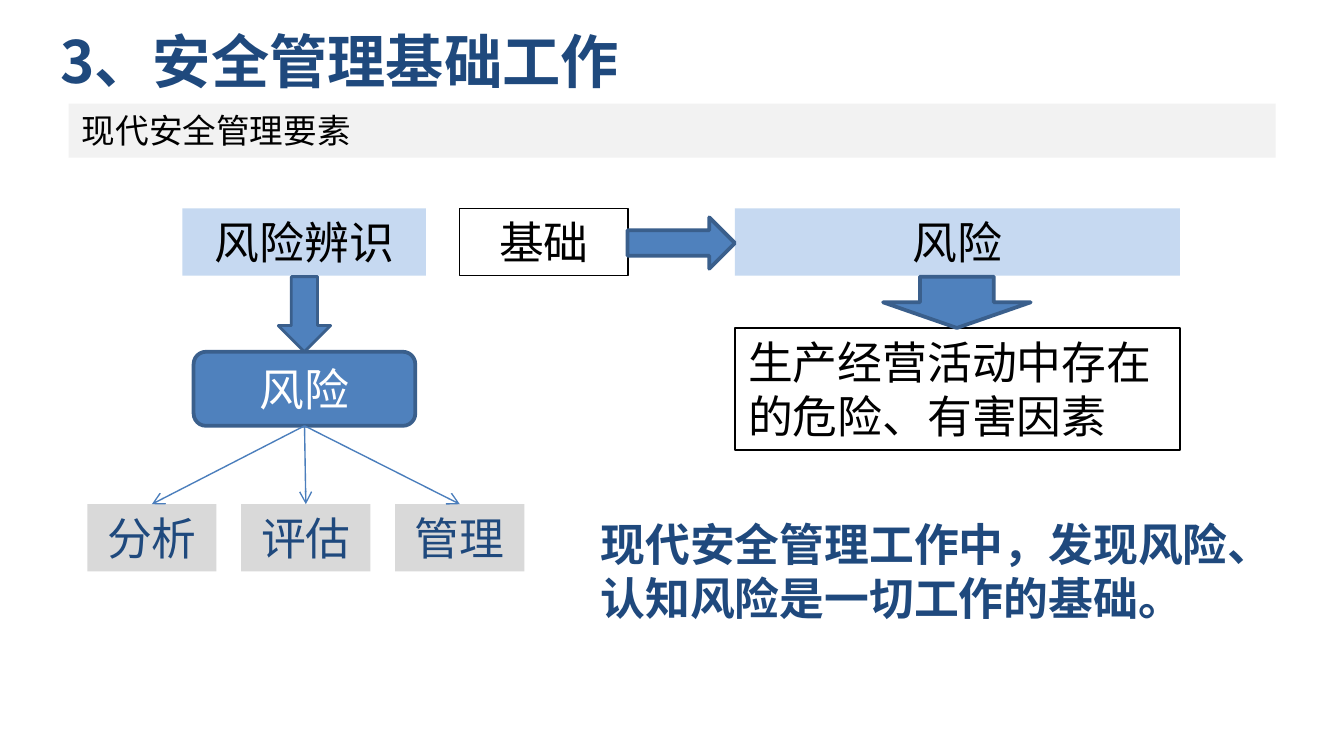
from dataclasses import dataclass
from typing import Optional

from lxml import etree
from pptx import Presentation
from pptx import util as u
from pptx.dml.color import RGBColor
from pptx.enum import shapes, text
from pptx.oxml.ns import qn


@dataclass(frozen=True)
class Theme:
    font: str = "Noto Sans CJK SC"
    navy: str = "1F497D"
    black: str = "000000"
    white: str = "FFFFFF"
    blue: str = "4F81BD"
    outline: str = "3A5F8C"
    link: str = "4B7EBC"
    pale_blue: str = "C6D9F1"
    grey: str = "D9D9D9"
    band: str = "F2F2F2"
    title: float = 31.2
    body: float = 24
    subtitle: float = 18


T = Theme()
RECT = shapes.MSO_SHAPE.RECTANGLE
ROUND = shapes.MSO_SHAPE.ROUNDED_RECTANGLE
DOWN = shapes.MSO_SHAPE.DOWN_ARROW
RIGHT = shapes.MSO_SHAPE.RIGHT_ARROW
LEFT_ALIGN = text.PP_ALIGN.LEFT
CENTER = text.PP_ALIGN.CENTER


@dataclass(frozen=True)
class Box:
    x: float
    y: float
    w: float
    h: float
    label: str = ""
    fill: Optional[str] = None
    line: Optional[str] = None
    line_width: float = 0.75
    color: str = T.black
    size: float = T.body
    align: text.PP_ALIGN = CENTER
    kind: shapes.MSO_SHAPE = RECT


@dataclass(frozen=True)
class Caption:
    x: float
    y: float
    w: float
    h: float
    label: str
    size: float


def rgb(value: str) -> RGBColor:
    return RGBColor.from_string(value)


def write(sp, label: str, size: float, color: str, align, bold: bool = False) -> None:
    tf = sp.text_frame
    tf.word_wrap = True
    tf.vertical_anchor = text.MSO_ANCHOR.TOP
    tf.text = label
    p = tf.paragraphs[0]
    p.alignment = align
    r = p.runs[0]
    r.font.name = T.font
    r.font.size = u.Pt(size)
    r.font.bold = bold
    r.font.color.rgb = rgb(color)
    ea = etree.SubElement(r.font._element, qn("a:ea"))
    ea.set("typeface", T.font)


def draw_box(s, box: Box):
    sp = s.shapes.add_shape(box.kind, u.Cm(box.x), u.Cm(box.y), u.Cm(box.w), u.Cm(box.h))
    sp.shadow.inherit = False
    if box.fill:
        sp.fill.solid()
        sp.fill.fore_color.rgb = rgb(box.fill)
    else:
        sp.fill.background()
    if box.line:
        sp.line.color.rgb = rgb(box.line)
        sp.line.width = u.Pt(box.line_width)
    else:
        sp.line.fill.background()
    if box.label:
        write(sp, box.label, box.size, box.color, box.align)
    if box.kind == ROUND:
        sp.text_frame.vertical_anchor = text.MSO_ANCHOR.MIDDLE
    return sp


def draw_caption(s, cap: Caption) -> None:
    sp = s.shapes.add_textbox(u.Cm(cap.x), u.Cm(cap.y), u.Cm(cap.w), u.Cm(cap.h))
    write(sp, cap.label, cap.size, T.navy, LEFT_ALIGN, bold=True)


def draw_link(s, parent, child) -> None:
    c = s.shapes.add_connector(shapes.MSO_CONNECTOR.STRAIGHT, 0, 0, 0, 0)
    c.begin_connect(parent, 2)
    c.end_connect(child, 0)
    c.line.color.rgb = rgb(T.link)
    c.line.width = u.Pt(0.75)
    etree.SubElement(c.line._get_or_add_ln(), qn("a:tailEnd"), type="arrow")
    etree.SubElement(c._element.spPr, qn("a:effectLst"))


ROW_Y, ROW_H = 3.94, 1.27
LEAF_X, LEAF_Y, LEAF_STEP = 1.65, 9.53, 2.91
RISK_X, RISK_W = 13.89, 8.41

SUBTITLE = Box(1.3, 1.96, 22.81, 1.02, "现代安全管理要素", T.band,
               size=T.subtitle, align=LEFT_ALIGN)
LEAVES = [Box(LEAF_X + i * LEAF_STEP, LEAF_Y, 2.44, ROW_H, label, T.grey, color=T.navy)
          for i, label in enumerate(("分析", "评估", "管理"))]
HUB = Box(3.66, 6.65, 4.19, 1.4, "风险", T.blue, T.outline, 2, T.white, kind=ROUND)
FLOW = [
    Box(3.45, ROW_Y, 4.6, ROW_H, "风险辨识", T.pale_blue),
    Box(5.26, 5.23, 0.99, 1.42, fill=T.blue, line=T.outline, line_width=1.5, kind=DOWN),
    Box(8.69, ROW_Y, 3.18, ROW_H, "基础", line=T.black),
    Box(RISK_X, ROW_Y, RISK_W, ROW_H, "风险", T.pale_blue),
    Box(11.86, 4.11, 2.03, 0.97, fill=T.blue, line=T.outline, line_width=2, kind=RIGHT),
    Box(RISK_X, 6.2, RISK_W, 2.31, "生产经营活动中存在的危险、有害因素",
        line=T.black, align=LEFT_ALIGN),
    Box(16.69, 5.23, 2.79, 0.97, fill=T.blue, line=T.outline, line_width=2, kind=DOWN),
]
CAPTIONS = [
    Caption(11.1, 9.65, 12.4, 2.31,
            "现代安全管理工作中，发现风险、认知风险是一切工作的基础。", T.body),
    Caption(0.89, 0.36, 22.86, 1.78, "3、安全管理基础工作", T.title),
]


def main() -> None:
    prs = Presentation()
    prs.slide_width, prs.slide_height = u.Cm(25.4), u.Cm(14.29)
    s = prs.slides.add_slide(prs.slide_layouts[6])
    draw_box(s, SUBTITLE)
    leaves = [draw_box(s, leaf) for leaf in LEAVES]
    hub = draw_box(s, HUB)
    for leaf in leaves:
        draw_link(s, hub, leaf)
    for box in FLOW:
        draw_box(s, box)
    for cap in CAPTIONS:
        draw_caption(s, cap)
    prs.save("out.pptx")


if __name__ == "__main__":
    main()
